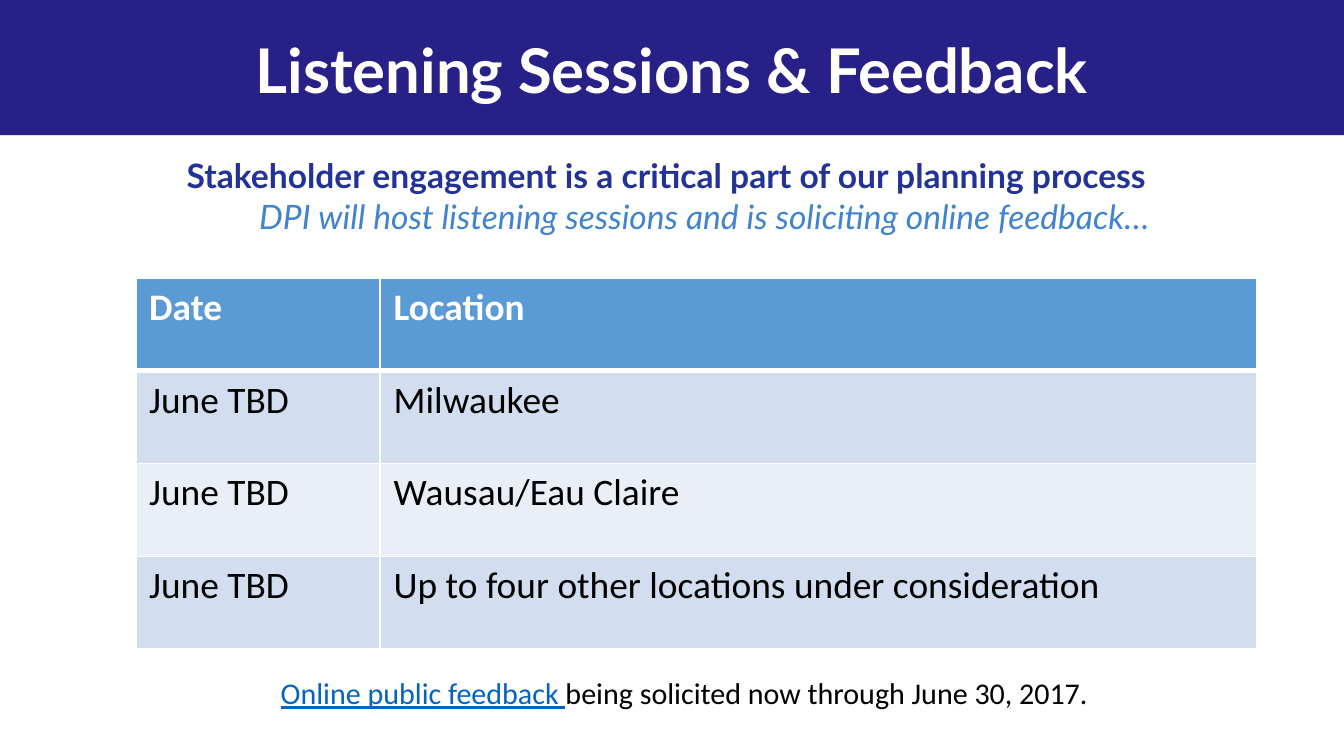
"""Build the listening sessions slide."""
from dataclasses import dataclass

from lxml import etree
from pptx import Presentation
from pptx import util as u
from pptx.dml.color import RGBColor
from pptx.enum import shapes, text
from pptx.oxml import ns

PX = 4572
NAVY = RGBColor(0x26, 0x20, 0x87)
INDIGO = RGBColor(0x23, 0x32, 0x97)
SKY = RGBColor(0x40, 0x83, 0xCF)
LINK = RGBColor(0x05, 0x63, 0xC1)
HEAD = RGBColor(0x5B, 0x9B, 0xD5)
BANDS = RGBColor(0xD2, 0xDE, 0xEF), RGBColor(0xEA, 0xEF, 0xF7)
WHITE = RGBColor(0xFF, 0xFF, 0xFF)
BLACK = RGBColor(0, 0, 0)

ROWS = [
    ("Date", "Location"),
    ("June TBD", "Milwaukee"),
    ("June TBD", "Wausau/Eau Claire"),
    ("June TBD", "Up to four other locations under consideration"),
]
COLS = 364, 1305
ROW = 138


@dataclass
class Run:
    """Hold one piece of text and its look."""
    words: str
    size: float
    font: str
    color: RGBColor
    bold: bool = False
    italic: bool = False
    under: bool = False


@dataclass
class Box:
    """Hold a place on the slide in px."""
    left: int
    top: int
    width: int
    height: int

    def emu(self) -> list:
        """Return the place in EMU."""
        return [n * PX for n in (self.left, self.top, self.width, self.height)]


def put(para, runs: list[Run]) -> None:
    """Write runs into a paragraph."""
    for item in runs:
        run = para.add_run()
        run.text = item.words
        look = {"size": u.Pt(item.size), "name": item.font, "bold": item.bold,
                "italic": item.italic, "underline": item.under}
        for key, value in look.items():
            setattr(run.font, key, value)
        run.font.color.rgb = item.color


def frame(shape, anchor, inset: tuple[int, int]) -> None:
    """Set wrapping, anchor and insets of a text shape."""
    side, edge = inset
    look = {"word_wrap": True, "auto_size": text.MSO_AUTO_SIZE.NONE,
            "vertical_anchor": anchor,
            "margin_left": side * PX, "margin_right": side * PX,
            "margin_top": edge * PX, "margin_bottom": edge * PX}
    for key, value in look.items():
        setattr(shape.text_frame, key, value)


def title(slide) -> None:
    """Draw the band and the title on it."""
    band = slide.shapes.add_shape(shapes.MSO_SHAPE.RECTANGLE, *Box(-2, 0, 2002, 201).emu())
    band.shadow.inherit = False
    band.fill.solid()
    band.fill.fore_color.rgb = NAVY
    band.line.fill.background()
    head = slide.shapes.title
    head._element.addprevious(band._element)
    place = zip(("left", "top", "width", "height"), Box(0, 0, 2000, 204).emu())
    for key, value in place:
        setattr(head, key, value)
    frame(head, text.MSO_ANCHOR.MIDDLE, (14, 8))
    para = head.text_frame.paragraphs[0]
    para.alignment = text.PP_ALIGN.CENTER
    put(para, [Run("Listening Sessions & Feedback", 33, "Lato", WHITE, bold=True)])


def intro(slide) -> None:
    """Draw the two centred lines under the band."""
    box = slide.shapes.add_textbox(*Box(150, 223, 1722, 126).emu())
    frame(box, text.MSO_ANCHOR.TOP, (14, 8))
    lines = [
        (Run("Stakeholder engagement is a critical part of our planning process",
             18, "Lato", INDIGO, bold=True), 0, 39),
        (Run("DPI will host listening sessions and is soliciting online feedback…",
             18, "Lato", SKY, italic=True), 75, 0),
    ]
    for i, (run, left, right) in enumerate(lines):
        para = box.text_frame.add_paragraph() if i else box.text_frame.paragraphs[0]
        para.alignment = text.PP_ALIGN.CENTER
        for key, gap in {"marL": left, "marR": right, "indent": 0}.items():
            para._p.get_or_add_pPr().set(key, str(gap * PX))
        put(para, [run])


def edge(cell, top: float, base: float) -> None:
    """Give a cell white borders."""
    props = cell._tc.get_or_add_tcPr()
    for i, (tag, wide) in enumerate(zip(("lnL", "lnR", "lnT", "lnB"), (1, 1, top, base))):
        line = etree.Element(ns.qn(f"a:{tag}"), w=str(u.Pt(wide)))
        fill = etree.SubElement(line, ns.qn("a:solidFill"))
        etree.SubElement(fill, ns.qn("a:srgbClr"), val=str(WHITE))
        props.insert(i, line)


def dates(slide) -> None:
    """Draw the table of dates and places."""
    box = Box(202, 414, sum(COLS), ROW * len(ROWS))
    grid = slide.shapes.add_table(len(ROWS), len(COLS), *box.emu()).table
    for col, wide in zip(grid.columns, COLS):
        col.width = wide * PX
    for r, row in enumerate(ROWS):
        grid.rows[r].height = ROW * PX
        for c, words in enumerate(row):
            cell = grid.cell(r, c)
            cell.fill.solid()
            cell.fill.fore_color.rgb = BANDS[(r - 1) % 2] if r else HEAD
            edge(cell, 3 if r == 1 else 1, 1 if r else 3)
            ink = BLACK if r else WHITE
            put(cell.text_frame.paragraphs[0], [Run(words, 20, "Calibri", ink, bold=r == 0)])


def note(slide) -> None:
    """Draw the line under the table."""
    box = slide.shapes.add_textbox(*Box(398, 994, 1602, 74).emu())
    frame(box, text.MSO_ANCHOR.TOP, (20, 10))
    put(box.text_frame.paragraphs[0], [
        Run("Online public feedback ", 16.1, "Calibri", LINK, under=True),
        Run("being solicited now through June 30, 2017.", 16.1, "Calibri", BLACK),
    ])


def main() -> None:
    """Build and save the slide."""
    deck = Presentation()
    deck.slide_width, deck.slide_height = 2000 * PX, 1125 * PX
    slide = deck.slides.add_slide(deck.slide_layouts[5])
    for draw in (title, intro, note, dates):
        draw(slide)
    deck.save("out.pptx")


if __name__ == "__main__":
    main()
